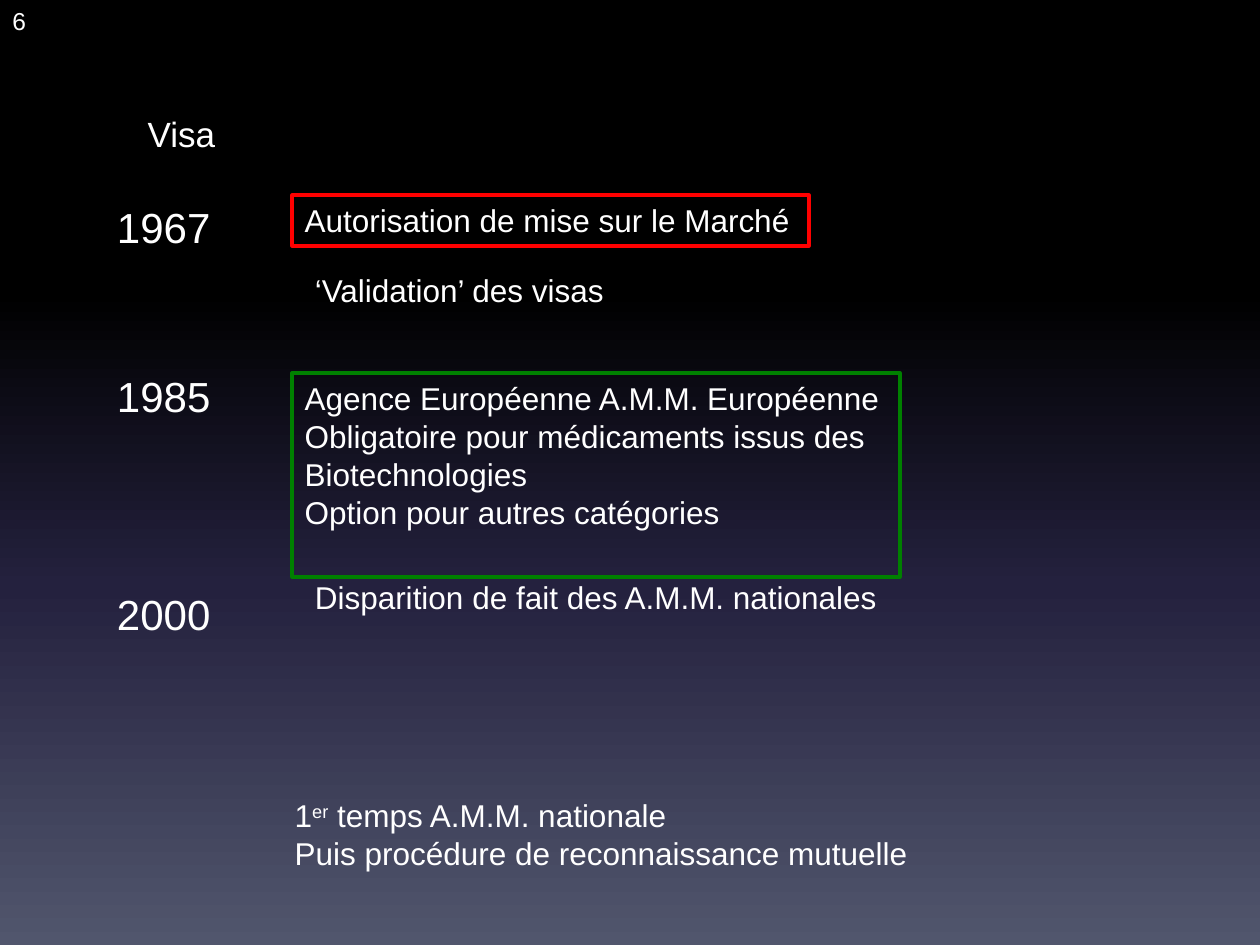
import dataclasses

import lxml.etree
import pptx
import pptx.dml.color
import pptx.enum.shapes
import pptx.enum.text
import pptx.oxml.ns
import pptx.util


@dataclasses.dataclass(frozen=True)
class Theme:
    font: str = "Arial"
    text: str = "FFFFFF"
    national: str = "FF0000"
    european: str = "008000"
    gradient: tuple = ((0, "000000"), (31, "000000"), (62, "24213E"), (100, "51566D"))
    number_size: int = 14
    body_size: int = 18
    label_size: int = 20
    year_size: int = 24
    frame_width: float = 2.25


THEME = Theme()
SLIDE_BOX = (0, 0, 10, 7.5)


def color(value):
    return pptx.dml.color.RGBColor.from_string(value)


def place(box, left, top, width, height):
    """Turn a place inside a box into a place on the slide, in inches."""
    return box[0] + left, box[1] + top, width, height


def add_text(slide, box, lines, size=THEME.body_size, centered=False, wrap=False, frame=None):
    """Add lines of text; a line is a string or a list of (text, is_superscript)."""
    lengths = [pptx.util.Inches(length) for length in box]
    if frame:
        shape = slide.shapes.add_shape(pptx.enum.shapes.MSO_SHAPE.RECTANGLE, *lengths)
        shape.shadow.inherit = False
        shape.fill.background()
        shape.line.color.rgb = color(frame)
        shape.line.width = pptx.util.Pt(THEME.frame_width)
    else:
        shape = slide.shapes.add_textbox(*lengths)
    text_frame = shape.text_frame
    text_frame.word_wrap = wrap
    text_frame.vertical_anchor = pptx.enum.text.MSO_ANCHOR.TOP
    alignment = pptx.enum.text.PP_ALIGN
    for index, line in enumerate(lines):
        paragraph = text_frame.add_paragraph() if index else text_frame.paragraphs[0]
        paragraph.alignment = alignment.CENTER if centered else alignment.LEFT
        for text, superscript in [(line, False)] if isinstance(line, str) else line:
            run = paragraph.add_run()
            run.text = text
            run.font.name = THEME.font
            run.font.size = pptx.util.Pt(size)
            run.font.color.rgb = color(THEME.text)
            if superscript:
                run.font._element.set("baseline", "30000")


def paint_background(slide):
    fill = slide.background.fill
    fill.gradient()
    fill.gradient_angle = 270
    qualified = pptx.oxml.ns.qn
    stops = next(slide.element.iter(qualified("a:gsLst")))
    for stop in list(stops):
        stops.remove(stop)
    for percent, value in THEME.gradient:
        stop = lxml.etree.SubElement(stops, qualified("a:gs"), pos=str(percent * 1000))
        lxml.etree.SubElement(stop, qualified("a:srgbClr"), val=value)


def add_header(slide, box):
    add_text(slide, place(box, 0, 0, 1, 0.34), ["6"], size=THEME.number_size, wrap=True)
    add_text(slide, place(box, 1.06, 0.84, 0.76, 0.44), ["Visa"],
             size=THEME.label_size, centered=True)


def add_years(slide, box):
    for year, top in (("1967", 0), ("1985", 1.34), ("2000", 3.07)):
        add_text(slide, place(box, 0, top, box[2], 0.51), [year], size=THEME.year_size)


def add_events(slide, box):
    add_text(slide, place(box, 0, 0, 4.1, 0.4),
             ["Autorisation de mise sur le Marché"], frame=THEME.national)
    add_text(slide, place(box, 0.08, 0.55, 2.52, 0.4), ["‘Validation’ des visas"])
    add_text(slide, place(box, 0, 1.41, box[2], 1.62),
             ["Agence Européenne A.M.M. Européenne",
              "Obligatoire pour médicaments issus des",
              "Biotechnologies",
              "Option pour autres catégories"], frame=THEME.european)
    add_text(slide, place(box, 0.08, 2.99, 4.71, 0.4),
             ["Disparition de fait des A.M.M. nationales"])


def add_procedure(slide, box):
    add_text(slide, box,
             [[("1", False), ("er", True), (" temps A.M.M. nationale", False)],
              "Puis procédure de reconnaissance mutuelle"])


def main():
    presentation = pptx.Presentation()
    presentation.slide_width = pptx.util.Inches(SLIDE_BOX[2])
    presentation.slide_height = pptx.util.Inches(SLIDE_BOX[3])
    slide = presentation.slides.add_slide(presentation.slide_layouts[6])
    paint_background(slide)
    add_header(slide, SLIDE_BOX)
    add_years(slide, (0.83, 1.55, 0.95, 3.58))
    add_events(slide, (2.32, 1.55, 4.82, 3.39))
    add_procedure(slide, (2.24, 6.27, 5.11, 0.71))
    presentation.save("out.pptx")


if __name__ == "__main__":
    main()
